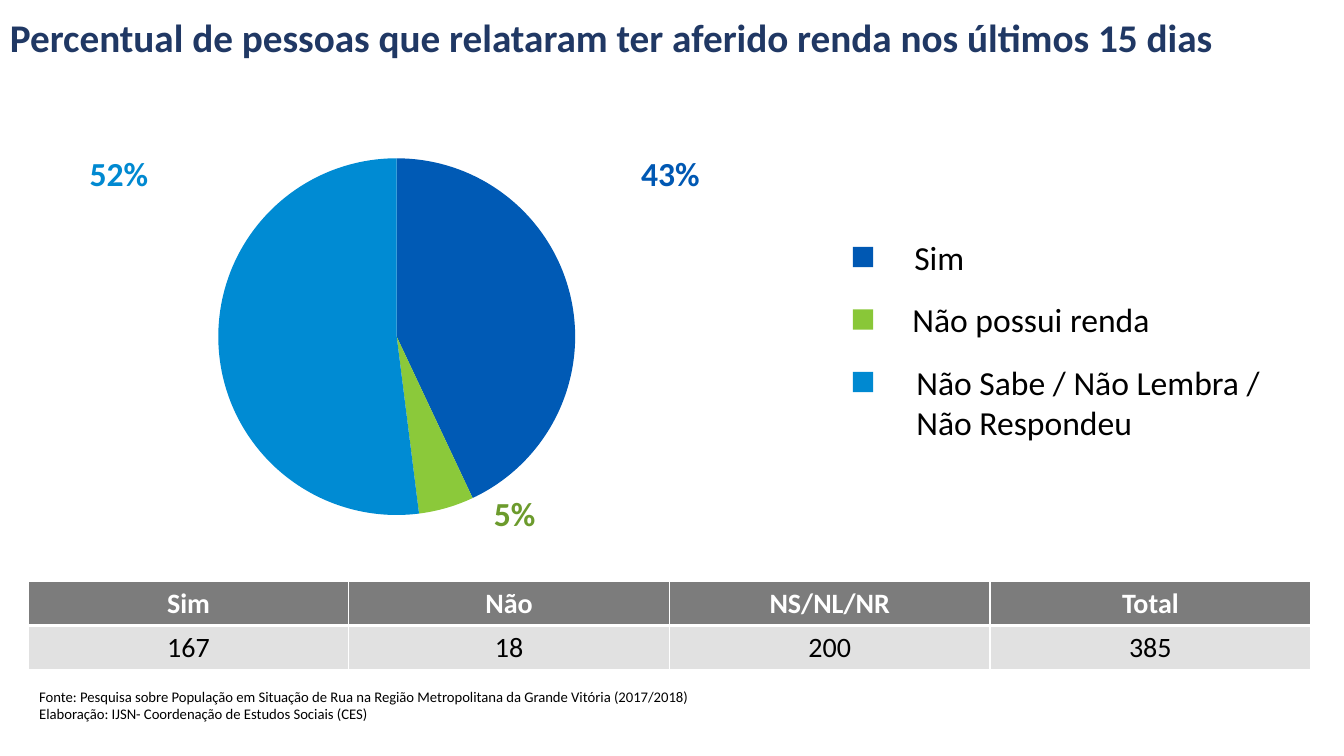
from pptx import Presentation
from pptx import util as u
from pptx.chart.data import CategoryChartData
from pptx.dml.color import RGBColor
from pptx.enum import chart as charts, shapes, text
from pptx.oxml import parse_xml
from pptx.oxml.ns import nsdecls

COLORS = {
    "title": "203864", "black": "000000", "white": "FFFFFF",
    "header": "7C7C7C", "row": "E1E1E1",
    "yes_slice": "005AB5", "no_slice": "8BC93A", "unknown_slice": "008BD3",
    "yes": "0058B3", "no": "89C738", "unknown": "0089D1", "no_label": "6C9B2D",
}


class IncomeSlide:
    font_name = "Calibri"

    def __init__(self, presentation):
        self.slide = presentation.slides.add_slide(presentation.slide_layouts[6])

    def color(self, name):
        return RGBColor.from_string(COLORS[name])

    def fill(self, target, name):
        target.fill.solid()
        target.fill.fore_color.rgb = self.color(name)

    def style(self, font, size, color, bold=False):
        font.name = self.font_name
        font.size = u.Pt(size)
        font.bold = bold
        font.color.rgb = self.color(color)

    def text(self, box, content, size, color, bold=False, wrap=False,
             anchor=text.MSO_ANCHOR.TOP, line_spacing=None):
        shape = self.slide.shapes.add_textbox(*map(u.Inches, box))
        frame = shape.text_frame
        frame.word_wrap = wrap
        frame.vertical_anchor = anchor
        frame.text = content
        for paragraph in frame.paragraphs:
            paragraph.line_spacing = line_spacing
            self.style(paragraph.font, size, color, bold)

    def square(self, left, top, side, color):
        shape = self.slide.shapes.add_shape(
            shapes.MSO_SHAPE.RECTANGLE, *map(u.Inches, (left, top, side, side)))
        shape.shadow.inherit = False
        self.fill(shape, color)
        shape.line.fill.background()

    def pie(self, box, values, colors):
        data = CategoryChartData()
        data.categories = ["1", "2", "3"]
        data.add_series("Series 1", values)
        chart = self.slide.shapes.add_chart(
            charts.XL_CHART_TYPE.PIE, *map(u.Inches, box), data).chart
        chart.has_legend = False
        chart.has_title = False
        self.style(chart.font, 10, "black")
        plot = chart.plots[0]
        plot.vary_by_categories = True
        for index, name in enumerate(colors):
            slice_format = plot.series[0].points[index].format
            self.fill(slice_format, name)
            slice_format.line.fill.background()
        plot_area = chart._chartSpace.chart.plotArea
        for layout in plot_area.findall("{*}layout"):
            plot_area.remove(layout)
        plot_area.insert(0, parse_xml(
            f'<c:layout {nsdecls("c")}><c:manualLayout>'
            '<c:layoutTarget val="inner"/><c:xMode val="edge"/><c:yMode val="edge"/>'
            '<c:x val="0"/><c:y val="0"/><c:w val="1"/><c:h val="1"/>'
            '</c:manualLayout></c:layout>'))

    def borders(self, cell, widths):
        properties = cell._tc.get_or_add_tcPr()
        for side, width in zip("LRTB", widths):
            properties.append(parse_xml(
                f'<a:ln{side} {nsdecls("a")} w="{u.Pt(width)}"><a:solidFill>'
                f'<a:srgbClr val="{COLORS["white"]}"/></a:solidFill></a:ln{side}>'))

    def table(self, box, rows):
        table = self.slide.shapes.add_table(
            len(rows), len(rows[0]), *map(u.Inches, box)).table
        looks = [("header", "white", True, (1, 1, 1, 3)),
                 ("row", "black", False, (1, 1, 3, 1))]
        for row, (values, look) in enumerate(zip(rows, looks)):
            background, color, bold, widths = look
            for column, value in enumerate(values):
                cell = table.cell(row, column)
                self.borders(cell, widths)
                self.fill(cell, background)
                cell.text = value
                paragraph = cell.text_frame.paragraphs[0]
                paragraph.alignment = text.PP_ALIGN.CENTER
                self.style(paragraph.font, 20, color, bold)


def main():
    presentation = Presentation()
    presentation.slide_width = u.Inches(13.33)
    presentation.slide_height = u.Inches(7.5)
    page = IncomeSlide(presentation)

    page.text((0, 0.1, 12.78, 0.62),
              "Percentual de pessoas que relataram ter aferido renda nos últimos 15 dias",
              28, "title", bold=True, wrap=True,
              anchor=text.MSO_ANCHOR.MIDDLE, line_spacing=0.8)
    page.pie((0, 1.57, 7.87, 3.54), (43, 5, 52),
             ("yes_slice", "no_slice", "unknown_slice"))
    page.table((0.28, 5.77, 12.72, 0.87),
               [("Sim", "Não", "NS/NL/NR", "Total"), ("167", "18", "200", "385")])

    for left, top, width, label, color in [
            (4.8, 4.84, 0.62, "5%", "no_label"),
            (0.79, 1.47, 0.79, "52%", "unknown"),
            (6.26, 1.47, 0.79, "43%", "yes")]:
        page.text((left, top, width, 0.5), label, 24, color, bold=True)

    legend = [("Sim", "yes", 8.97, 0.7, 0.5),
              ("Não possui renda", "no", 8.95, 2.58, 0.5),
              ("Não Sabe / Não Lembra /\vNão Respondeu", "unknown", 8.99, 3.64, 0.91)]
    for index, (label, color, left, width, height) in enumerate(legend):
        top = 2.3 + 0.62 * index
        page.square(8.46, top + 0.15, 0.2, color)
        page.text((left, top, width, height), label, 24, "black")

    page.text((0.29, 6.64, 12.72, 0.58),
              "Fonte: Pesquisa sobre População em Situação de Rua na Região "
              "Metropolitana da Grande Vitória (2017/2018)\n"
              "Elaboração: IJSN- Coordenação de Estudos Sociais (CES)",
              10.5, "black", wrap=True, anchor=text.MSO_ANCHOR.BOTTOM)
    presentation.save("out.pptx")


if __name__ == "__main__":
    main()
